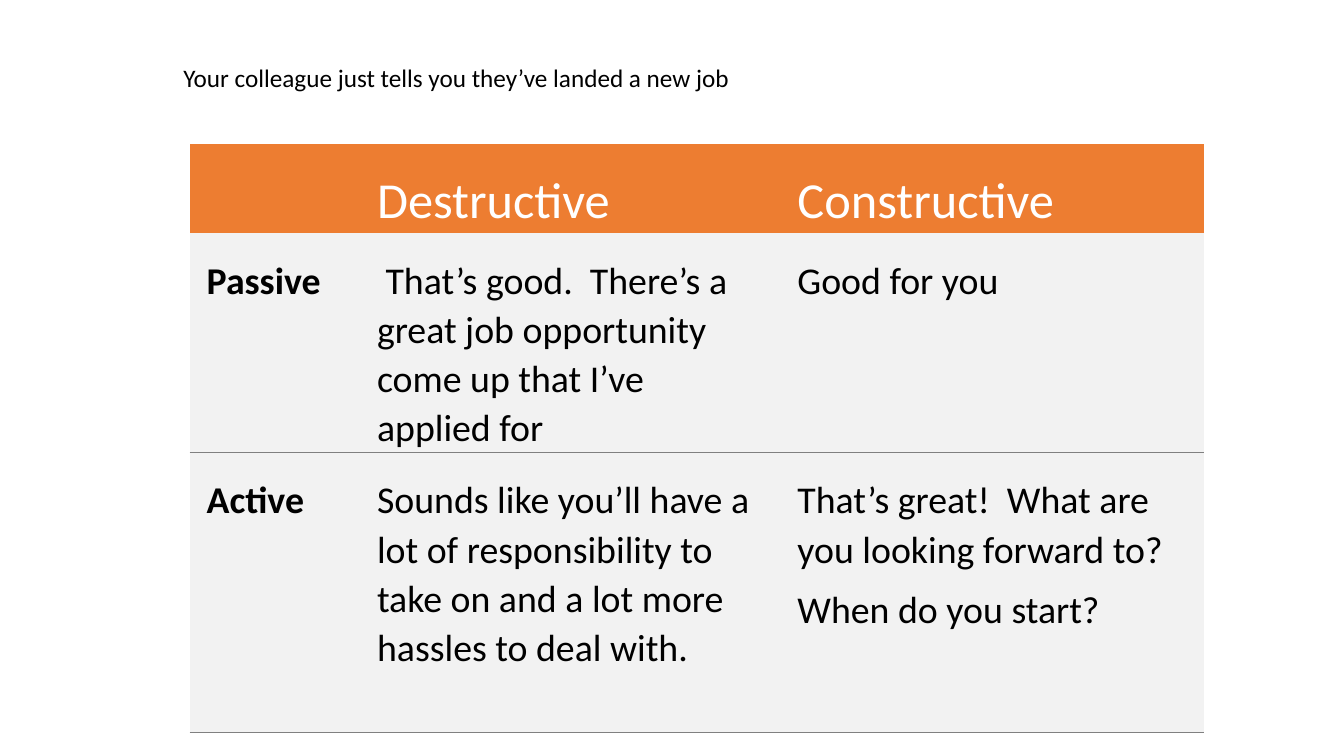
"""Build a slide with a table of responses to a colleague's good news."""
from lxml import etree
from pptx import Presentation
from pptx.dml.color import RGBColor
from pptx.enum.text import MSO_ANCHOR
from pptx.oxml.ns import qn
from pptx.util import Inches, Pt

MIDDLE, TOP = MSO_ANCHOR.MIDDLE, MSO_ANCHOR.TOP
FONT = "Calibri"
NO_GRID_STYLE = "{2D5ABB26-0587-4C30-8999-92F81FD0307C}"
COLORS = {"header": "ED7D31", "body": "F2F2F2", "rule": "808080",
          "light": "FFFFFF", "dark": "000000"}

SITUATION = "Your colleague just tells you they’ve landed a new job"
RESPONSES = [
    [[], ["Destructive"], ["Constructive"]],
    [["Passive"],
     [" That’s good.  There’s a great job opportunity come up that I’ve applied for"],
     ["Good for you"]],
    [["Active"],
     ["Sounds like you’ll have a lot of responsibility to take on and a lot more  "
      "hassles to deal with."],
     ["That’s great!  What are you looking forward to?", "When do you start?"]],
]
TABLE_LEFT, TABLE_TOP = 1.88, 1.43
COLUMN_WIDTHS = [1.69, 4.17, 4.2]
ROW_HEIGHTS = [0.88, 2.18, 2.78]


def style_font(para, size, color, bold=False):
    para.font.name = FONT
    para.font.size = Pt(size)
    para.font.bold = bold
    para.font.color.rgb = RGBColor.from_string(COLORS[color])


def add_bottom_rule(cell):
    properties = cell._tc.get_or_add_tcPr()
    line = etree.Element(qn("a:lnB"), w=str(Pt(0.75)))
    fill = etree.SubElement(line, qn("a:solidFill"))
    etree.SubElement(fill, qn("a:srgbClr"), val=COLORS["rule"])
    properties.insert(0, line)


def fill_cell(cell, lines, is_header, is_label):
    cell.margin_left = cell.margin_right = Inches(0.17)
    cell.margin_top, cell.margin_bottom = Inches(0.22), 0
    cell.vertical_anchor = MIDDLE if is_header else TOP
    cell.fill.solid()
    cell.fill.fore_color.rgb = RGBColor.from_string(
        COLORS["header" if is_header else "body"])
    if not is_header:
        add_bottom_rule(cell)
    frame = cell.text_frame
    frame.text = "\n".join(lines)
    for para in frame.paragraphs:
        para.line_spacing = 1.07
        para.space_after = Pt(8)
        style_font(para, 36 if is_header else 27,
                   "light" if is_header else "dark", is_label)


def add_situation(page):
    box = page.shapes.add_textbox(Inches(1.72), Inches(0.57), Inches(9.5), Inches(0.4))
    box.text_frame.word_wrap = True
    para = box.text_frame.paragraphs[0]
    para.text = SITUATION
    style_font(para, 18, "dark")


def add_responses(page):
    holder = page.shapes.add_table(
        len(ROW_HEIGHTS), len(COLUMN_WIDTHS), Inches(TABLE_LEFT), Inches(TABLE_TOP),
        Inches(sum(COLUMN_WIDTHS)), Inches(sum(ROW_HEIGHTS)))
    table = holder.table
    table.horz_banding = False
    next(holder.element.iter(qn("a:tableStyleId"))).text = NO_GRID_STYLE
    for column, width in zip(table.columns, COLUMN_WIDTHS):
        column.width = Inches(width)
    for row, height in zip(table.rows, ROW_HEIGHTS):
        row.height = Inches(height)
    for row_index, row_texts in enumerate(RESPONSES):
        for column_index, lines in enumerate(row_texts):
            fill_cell(table.cell(row_index, column_index), lines,
                      row_index == 0, row_index > 0 and column_index == 0)


def main():
    deck = Presentation()
    deck.slide_width, deck.slide_height = Inches(13.33), Inches(7.5)
    page = deck.slides.add_slide(deck.slide_layouts[6])
    add_responses(page)
    add_situation(page)
    deck.save("out.pptx")


if __name__ == "__main__":
    main()
